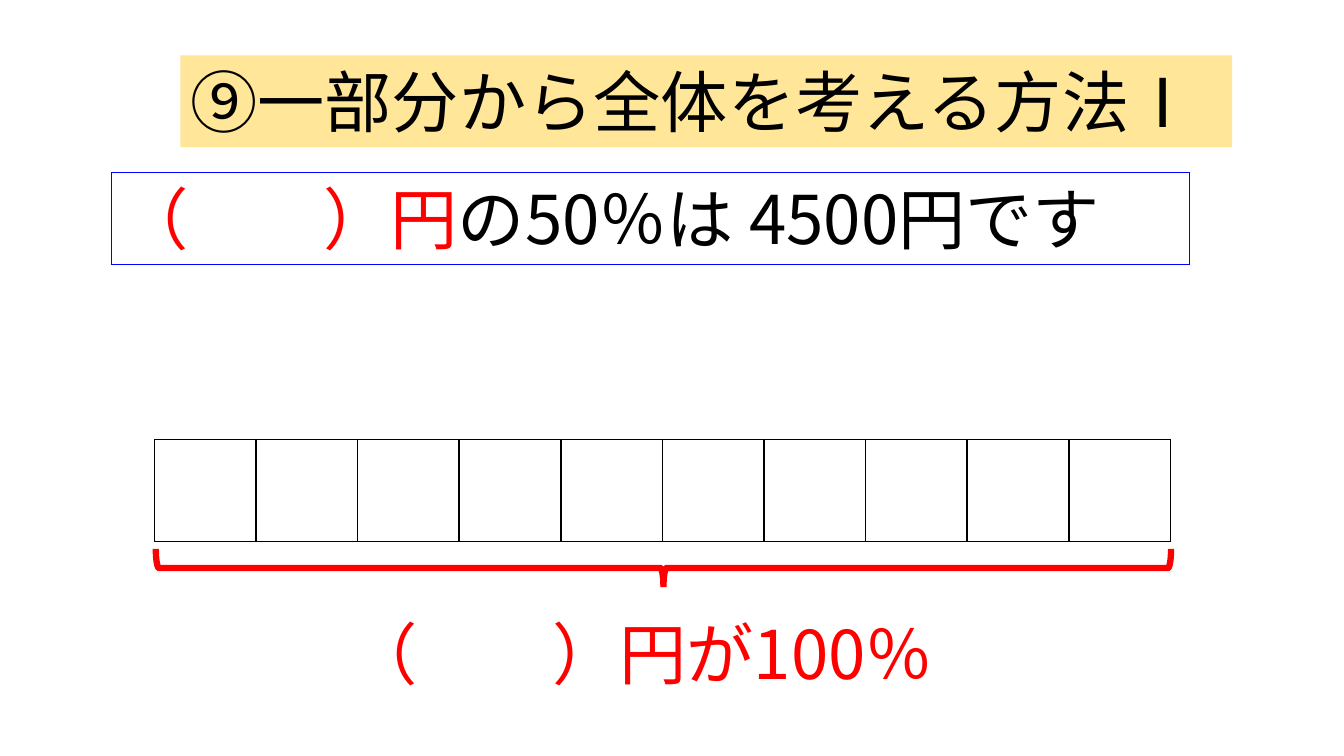
from lxml.etree import SubElement
from pptx import Presentation
from pptx.dml.color import RGBColor
from pptx.enum.shapes import MSO_SHAPE as SHAPE
from pptx.enum.text import MSO_ANCHOR, PP_ALIGN
from pptx.oxml.ns import qn
from pptx.util import Inches, Pt

COLORS = {"black": "000000", "red": "FF0000", "blue": "0000FF", "cream": "FFE699"}
FONT = "Noto Sans CJK JP"

presentation = Presentation()
presentation.slide_width = Inches(13.33)
presentation.slide_height = Inches(7.5)
slide = presentation.slides.add_slide(presentation.slide_layouts[6])


def add_box(kind, left, top, width, height, fill=None, line=None, weight=1):
    shape = slide.shapes.add_shape(
        kind, Inches(left), Inches(top), Inches(width), Inches(height))
    shape.shadow.inherit = False
    if fill:
        shape.fill.solid()
        shape.fill.fore_color.rgb = RGBColor.from_string(COLORS[fill])
    else:
        shape.fill.background()
    if line:
        shape.line.color.rgb = RGBColor.from_string(COLORS[line])
        shape.line.width = Pt(weight)
        SubElement(shape.line._ln, qn("a:miter")).set("lim", "800000")
    else:
        shape.line.fill.background()
    return shape


def add_text(shape, text, color="black", size=48):
    frame = shape.text_frame
    frame.word_wrap = True
    frame.vertical_anchor = MSO_ANCHOR.TOP
    paragraph = frame.paragraphs[0]
    paragraph.alignment = PP_ALIGN.LEFT
    run = paragraph.add_run()
    run.text = text
    run.font.size = Pt(size)
    run.font.name = FONT
    run.font.color.rgb = RGBColor.from_string(COLORS[color])
    SubElement(run.font._element, qn("a:ea")).set("typeface", FONT)


cell_count, cell_size = 10, 1.01
bar_left, bar_right, bar_top = 1.53, 11.61, 4.36
cell_step = (bar_right - bar_left - cell_size) / (cell_count - 1)
for index in range(cell_count):
    add_box(SHAPE.RECTANGLE, bar_left + index * cell_step, bar_top,
            cell_size, cell_size, line="black")

brace = add_box(SHAPE.RIGHT_BRACE, 6.39, 0.6, 0.38, 10.07, line="red", weight=4.5)
brace.rotation = 90

whole_label = slide.shapes.add_textbox(
    Inches(3.38), Inches(6.03), Inches(6.4), Inches(0.91))
add_text(whole_label, "（　　）円が100％", color="red")

question = add_box(SHAPE.RECTANGLE, 1.11, 1.71, 10.69, 0.91, line="blue", weight=0.75)
add_text(question, "（　　）円", color="red")
add_text(question, "の50％は 4500円です")

title = add_box(SHAPE.RECTANGLE, 1.79, 0.55, 10.43, 0.91, fill="cream")
add_text(title, "⑨一部分から全体を考える方法Ⅰ")

presentation.save("out.pptx")
